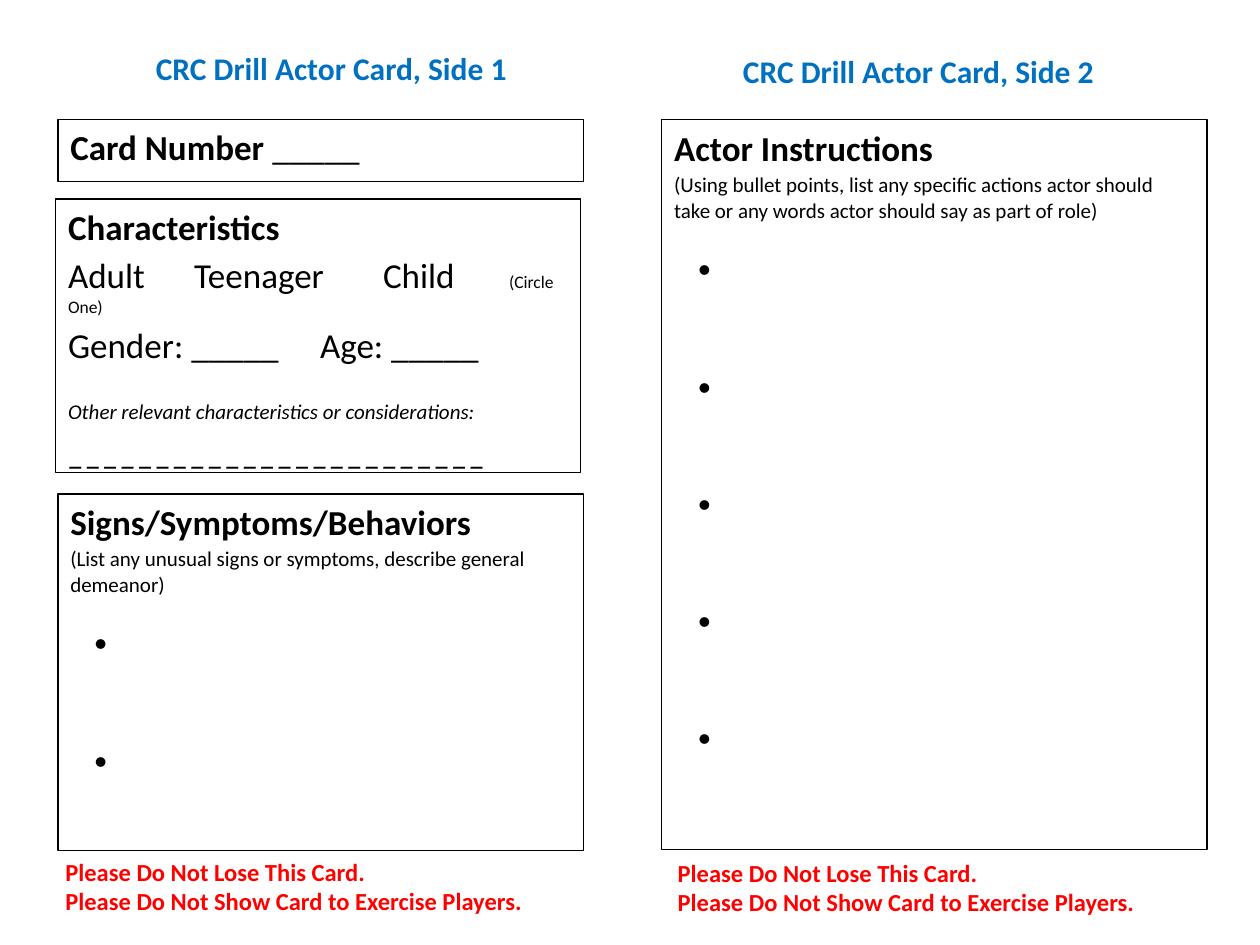
import pptx
import pptx.dml.color
import pptx.enum.shapes
import pptx.enum.text
import pptx.oxml.ns
import pptx.util
import lxml.etree

Inches = pptx.util.Inches
Pt = pptx.util.Pt
BLACK = pptx.dml.color.RGBColor(0x00, 0x00, 0x00)
BLUE = pptx.dml.color.RGBColor(0x00, 0x70, 0xC0)
RED = pptx.dml.color.RGBColor(0xFF, 0x00, 0x00)

LARGE, SMALL, TINY = 20, 12, 10
FIRST_BULLET_GAP, BULLET_GAP = 19.2, 52.6
WARNING = ["Please Do Not Lose This Card.", "Please Do Not Show Card to Exercise Players."]


def write(para, text, size=LARGE, color=BLACK, bold=False, italic=False):
    span = para.add_run()
    span.text = text
    span.font.name = "Calibri"
    span.font.size = Pt(size)
    span.font.color.rgb = color
    span.font.bold = bold
    span.font.italic = italic


class Card:
    def __init__(self, page):
        self.page = page

    def prepare(self, box, anchor):
        frame = box.text_frame
        frame.word_wrap = True
        frame.auto_size = pptx.enum.text.MSO_AUTO_SIZE.NONE
        frame.vertical_anchor = anchor

    def place(self, box, left, top, width, height):
        box.left, box.top = Inches(left), Inches(top)
        box.width, box.height = Inches(width), Inches(height)

    def paragraph(self, box, gap=0, indent=0, tabs=(), align=pptx.enum.text.PP_ALIGN.LEFT):
        frame = box.text_frame
        para = frame.paragraphs[0]
        if para.runs:
            para = frame.add_paragraph()
        para.alignment = align
        para.space_before = Pt(gap)
        properties = para._p.get_or_add_pPr()
        properties.set("marL", str(Inches(indent)))
        properties.set("indent", "0")
        lxml.etree.SubElement(properties, pptx.oxml.ns.qn("a:buNone"))
        if tabs:
            stops = lxml.etree.SubElement(properties, pptx.oxml.ns.qn("a:tabLst"))
            for position in tabs:
                lxml.etree.SubElement(stops, pptx.oxml.ns.qn("a:tab"),
                                      pos=str(Inches(position)), algn="l")
        return para

    def text_box(self, left, top, width, height):
        return self.page.shapes.add_textbox(
            Inches(left), Inches(top), Inches(width), Inches(height))

    def title(self, box, text):
        self.prepare(box, pptx.enum.text.MSO_ANCHOR.MIDDLE)
        para = self.paragraph(box, align=pptx.enum.text.PP_ALIGN.CENTER)
        write(para, text, size=18, color=BLUE, bold=True)

    def panel(self, box, heading):
        self.prepare(box, pptx.enum.text.MSO_ANCHOR.TOP)
        box.fill.background()
        box.line.color.rgb = BLACK
        box.line.width = Pt(0.75)
        para = self.paragraph(box)
        write(para, heading, bold=True)
        return para

    def rectangle(self, left, top, width, height):
        box = self.page.shapes.add_shape(
            pptx.enum.shapes.MSO_SHAPE.RECTANGLE,
            Inches(left), Inches(top), Inches(width), Inches(height))
        box.shadow.inherit = False
        return box

    def bullet_panel(self, box, heading, hint, count):
        self.panel(box, heading)
        write(self.paragraph(box, gap=2.2), hint, size=SMALL)
        for number in range(count):
            gap = BULLET_GAP if number else FIRST_BULLET_GAP
            write(self.paragraph(box, gap=gap, indent=0.19), "●", size=SMALL)

    def warning(self, left, top):
        box = self.text_box(left, top, 4.21, 0.57)
        self.prepare(box, pptx.enum.text.MSO_ANCHOR.TOP)
        for line in WARNING:
            write(self.paragraph(box), line, size=14, color=RED, bold=True)


def main():
    deck = pptx.Presentation()
    deck.slide_width, deck.slide_height = Inches(10), Inches(7.5)
    page = deck.slides.add_slide(deck.slide_layouts[3])
    card = Card(page)
    title, characteristics, instructions = list(page.placeholders)[:3]

    card.place(title, 0.42, 0.15, 4.42, 0.78)
    card.title(title, "CRC Drill Actor Card, Side 1")

    card.place(characteristics, 0.44, 1.58, 4.17, 2.17)
    card.panel(characteristics, "Characteristics")
    group = card.paragraph(characteristics, gap=3.6, tabs=(0.92, 2.27, 3.28))
    write(group, "Adult\tTeenager\tChild\t")
    write(group, "(Circle One)", size=TINY)
    write(card.paragraph(characteristics, gap=3.6, tabs=(1.98,)), "Gender: _____\tAge: _____")
    write(card.paragraph(characteristics, gap=19),
          "Other relevant characteristics or considerations:", size=SMALL, italic=True)
    write(card.paragraph(characteristics, gap=3.6), "_" * 24, italic=True)

    card.place(instructions, 5.25, 0.95, 4.33, 5.79)
    card.bullet_panel(
        instructions, "Actor Instructions",
        "(Using bullet points, list any specific actions actor should take "
        "or any words actor should say as part of role)", 5)

    card.title(card.text_box(5.08, 0.17, 4.42, 0.78), "CRC Drill Actor Card, Side 2")
    card.warning(0.42, 6.75)
    card.warning(5.28, 6.76)

    card.bullet_panel(
        card.rectangle(0.46, 3.92, 4.17, 2.83), "Signs/Symptoms/Behaviors",
        "(List any unusual signs or symptoms, describe general demeanor)", 2)
    number = card.panel(card.rectangle(0.46, 0.95, 4.17, 0.49), "Card Number ")
    write(number, "_____")

    deck.save("out.pptx")


if __name__ == "__main__":
    main()
